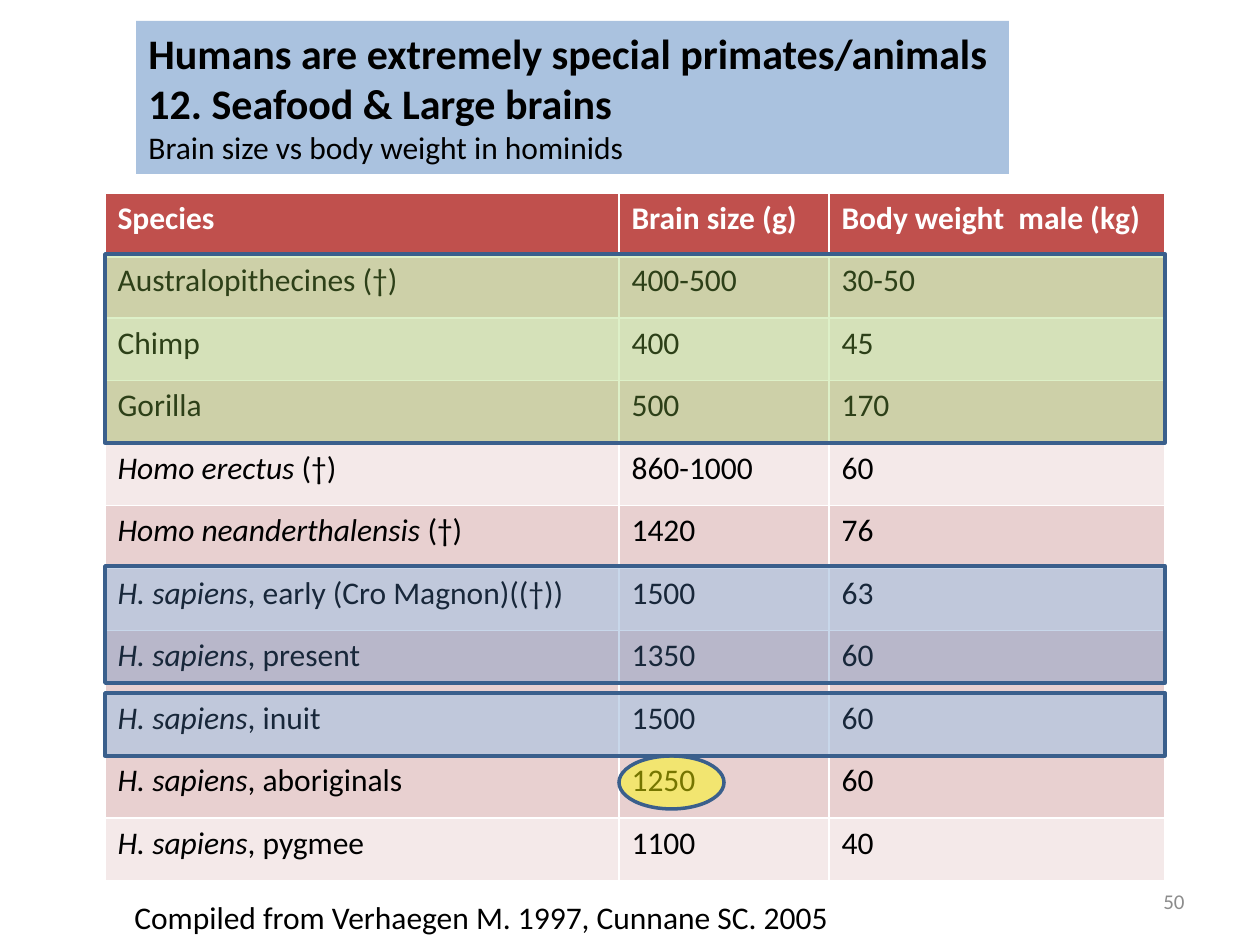
import lxml.etree
import pptx
import pptx.dml.color
import pptx.enum.shapes
import pptx.enum.text
import pptx.oxml.ns
import pptx.util

PX = 914400 / 126
FONT = "Calibri"
COLORS = {
    "text": "000000", "white": "FFFFFF", "number": "8C8C8C",
    "header": "C0504D", "odd": "E8D0D0", "even": "F4E9E9",
    "outline": "3A5F8C", "green": "92D050", "blue": "4F81BD", "yellow": "FFFF00",
}
COLUMN_WIDTHS = (514, 210, 336)
HEADINGS = ("Species", "Brain size (g)", "Body weight  male (kg)")
HOMINIDS = (
    ("", "Australopithecines (†)", "400-500", "30-50"),
    ("", "Chimp", "400", "45"),
    ("", "Gorilla", "500", "170"),
    ("Homo erectus", " (†)", "860-1000", "60"),
    ("Homo neanderthalensis", " (†)", "1420", "76"),
    ("H. sapiens", ", early (Cro Magnon)((†))", "1500", "63"),
    ("H. sapiens", ", present", "1350", "60"),
    ("H. sapiens", ", inuit", "1500", "60"),
    ("H. sapiens", ", aboriginals", "1250", "60"),
    ("H. sapiens", ", pygmee", "1100", "40"),
)


def emu(*lengths):
    """Turn px lengths into EMU."""
    return [pptx.util.Emu(round(length * PX)) for length in lengths]


def rgb(name):
    """Look up a named colour."""
    return pptx.dml.color.RGBColor.from_string(COLORS[name])


def set_font(paragraph, size, color="text", bold=False):
    """Set the font of a whole paragraph."""
    font = paragraph.font
    font.name, font.size, font.bold = FONT, pptx.util.Pt(size), bold
    font.color.rgb = rgb(color)


def fill_translucent(shape, color, opacity):
    """Fill a shape with a colour at an opacity in percent."""
    shape.fill.solid()
    shape.fill.fore_color.rgb = rgb(color)
    srgb = shape.fill._xPr.find(".//" + pptx.oxml.ns.qn("a:srgbClr"))
    lxml.etree.SubElement(srgb, pptx.oxml.ns.qn("a:alpha"), val=str(opacity * 1000))


def add_text(slide, box, lines, wrap=False):
    """Add a text box holding (text, size, bold, colour) lines."""
    text_box = slide.shapes.add_textbox(*emu(*box))
    frame = text_box.text_frame
    frame.word_wrap = wrap
    for index, (text, size, bold, color) in enumerate(lines):
        paragraph = frame.add_paragraph() if index else frame.paragraphs[0]
        paragraph.text = text
        set_font(paragraph, size, color, bold)
    return text_box


def add_heading(slide, box):
    """Place the tinted heading block."""
    heading = add_text(slide, box, (
        ("Humans are extremely special primates/animals", 24, True, "text"),
        ("12. Seafood & Large brains", 24, True, "text"),
        ("Brain size vs body weight in hominids", 18, False, "text"),
    ))
    fill_translucent(heading, "blue", 48)


def style_cell(cell, fill, bottom_width):
    """Give a cell white borders and a plain fill."""
    properties = cell._tc.get_or_add_tcPr()
    for side in "LRTB":
        width = bottom_width if side == "B" else 1
        border = lxml.etree.SubElement(
            properties, pptx.oxml.ns.qn("a:ln" + side), w=str(pptx.util.Pt(width)))
        solid = lxml.etree.SubElement(border, pptx.oxml.ns.qn("a:solidFill"))
        lxml.etree.SubElement(solid, pptx.oxml.ns.qn("a:srgbClr"), val=COLORS["white"])
    cell.fill.solid()
    cell.fill.fore_color.rgb = rgb(fill)


def add_hominid_table(slide, box):
    """Place the table of brain sizes and body weights."""
    rows = [("", *HEADINGS), *HOMINIDS]
    table = slide.shapes.add_table(len(rows), len(HEADINGS), *emu(*box)).table
    for column, width in zip(table.columns, emu(*COLUMN_WIDTHS)):
        column.width = width
    for row, (latin_name, *values) in enumerate(rows):
        is_header = row == 0
        fill = "header" if is_header else ("odd" if row % 2 else "even")
        for column, value in enumerate(values):
            cell = table.cell(row, column)
            style_cell(cell, fill, 3 if is_header else 1)
            paragraph = cell.text_frame.paragraphs[0]
            if latin_name and column == 0:
                species = paragraph.add_run()
                species.text = latin_name
                species.font.italic = True
            paragraph.add_run().text = value
            set_font(paragraph, 18, "white" if is_header else "text", is_header)


def add_highlight(slide, kind, box, color, opacity):
    """Lay a translucent outlined marker over table cells."""
    marker = slide.shapes.add_shape(kind, *emu(*box))
    marker.shadow.inherit = False
    fill_translucent(marker, color, opacity)
    marker.line.color.rgb = rgb("outline")
    marker.line.width = pptx.util.Pt(2)


def add_highlights(slide, box):
    """Mark the groups of rows and the outlying brain size."""
    left, top, width, _ = box
    kinds = pptx.enum.shapes.MSO_SHAPE
    for offset, height, color in ((61, 189, "green"), (500, 63, "blue"), (373, 117, "blue")):
        add_highlight(slide, kinds.RECTANGLE, (left, top + offset, width, height), color, 31)
    add_highlight(slide, kinds.OVAL, (left + COLUMN_WIDTHS[0], top + 563, 105, 53), "yellow", 46)


def add_slide_number(slide, box):
    """Place the grey slide number."""
    number = add_text(slide, box, (("50", 12, False, "number"),), wrap=True)
    number.text_frame.vertical_anchor = pptx.enum.text.MSO_ANCHOR.MIDDLE
    number.text_frame.paragraphs[0].alignment = pptx.enum.text.PP_ALIGN.RIGHT


def add_citation(slide, box):
    """Place the line naming the data's authors."""
    add_text(slide, box, (
        ("Compiled from Verhaegen M. 1997, Cunnane SC. 2005", 18, False, "text"),))


def main():
    """Build and save the slide."""
    presentation = pptx.Presentation()
    presentation.slide_width, presentation.slide_height = emu(1260, 945)
    slide = presentation.slides.add_slide(presentation.slide_layouts[6])
    table_box = (105, 193, sum(COLUMN_WIDTHS), 688)
    add_slide_number(slide, (903, 876, 294, 50))
    add_hominid_table(slide, table_box)
    add_highlights(slide, table_box)
    add_heading(slide, (136, 21, 873, 153))
    add_citation(slide, (122, 892, 728, 50))
    presentation.save("out.pptx")


if __name__ == "__main__":
    main()
